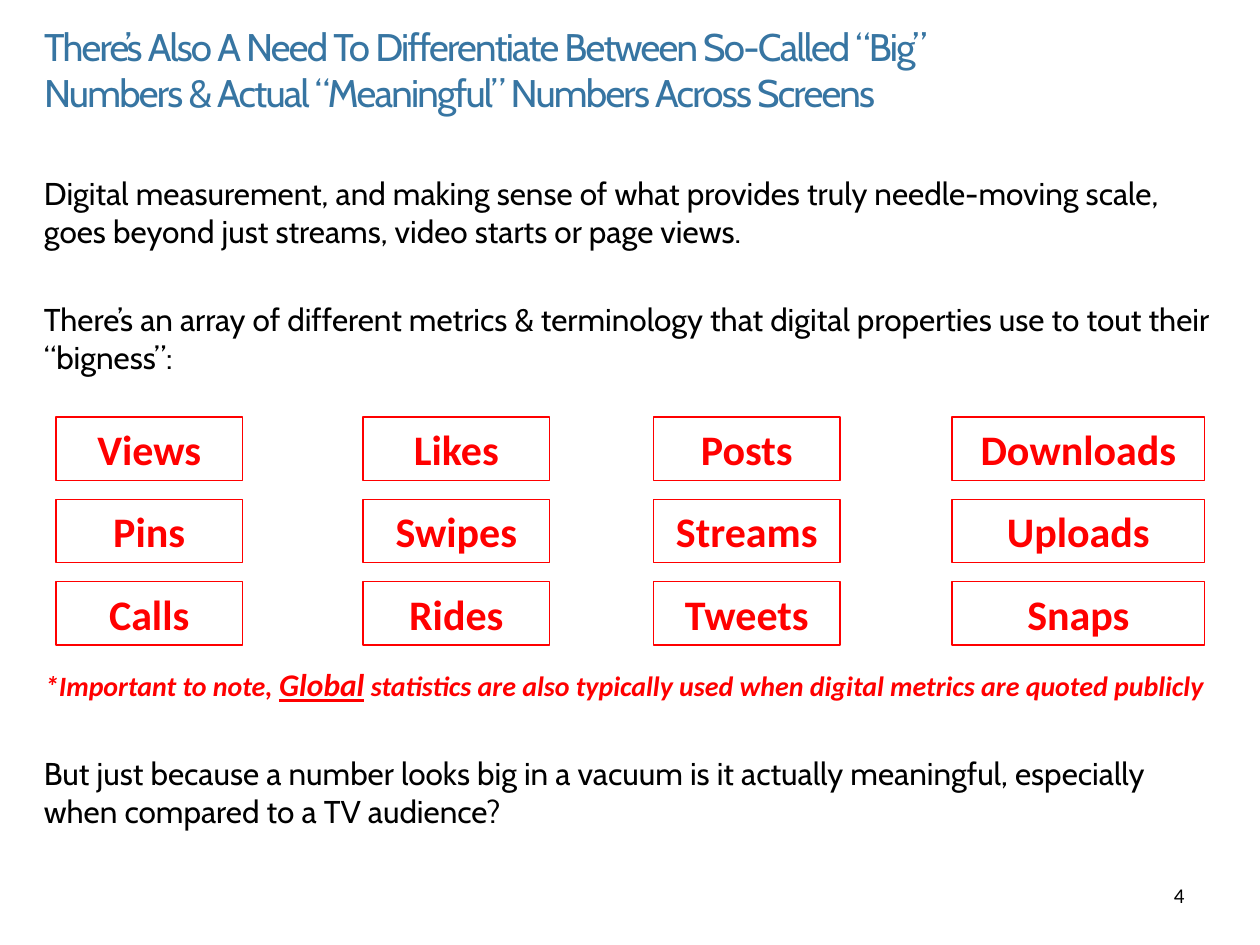
from dataclasses import dataclass

from pptx import Presentation
from pptx.dml.color import RGBColor
from pptx.enum.shapes import MSO_SHAPE
from pptx.enum.text import MSO_ANCHOR, MSO_AUTO_SIZE, PP_ALIGN
from pptx.slide import Slide
from pptx.text.text import TextFrame, _Run as Run
from pptx.util import Pt

BLACK = RGBColor(0x00, 0x00, 0x00)
RED = RGBColor(0xFF, 0x00, 0x00)
BLUE = RGBColor(0x37, 0x75, 0xA2)

TITLE_FORMAT = {"name": "Cabin", "size": Pt(22), "bold": False}
BODY_FORMAT = {"name": "Cabin", "size": Pt(18)}
METRIC_FORMAT = {"name": "Calibri", "size": Pt(24), "bold": True}
NOTE_FORMAT = {"name": "Calibri", "size": Pt(16), "bold": True, "italic": True}
NOTE_KEY_FORMAT = NOTE_FORMAT | {"size": Pt(18), "underline": True}
NUMBER_FORMAT = {"name": "Calibri", "size": Pt(12)}

TITLE = ("There’s Also A Need To Differentiate Between So-Called “Big” "
         "Numbers & Actual “Meaningful” Numbers Across Screens")

# Text and the space before it, in points
BODY = [
    ("Digital measurement, and making sense of what provides truly "
     "needle-moving scale, goes beyond just streams, video starts or page views.", 0),
    ("There’s an array of different metrics & terminology that digital "
     "properties use to tout their “bigness”:", 29),
    ("But just because a number looks big in a vacuum is it actually "
     "meaningful, especially when compared to a TV audience?", 216),
]

NOTE = [
    ("*Important to note, ", NOTE_FORMAT),
    ("Global", NOTE_KEY_FORMAT),
    (" statistics are also typically used when digital metrics are quoted publicly",
     NOTE_FORMAT),
]


@dataclass(frozen=True)
class MetricColumn:
    left: float
    width: float
    labels: tuple[str, ...]


COLUMNS = [
    MetricColumn(32, 106.5, ("Views", "Pins", "Calls")),
    MetricColumn(207.5, 106.5, ("Likes", "Swipes", "Rides")),
    MetricColumn(373.5, 106.5, ("Posts", "Streams", "Tweets")),
    MetricColumn(544, 144.5, ("Downloads", "Uploads", "Snaps")),
]
METRIC_TOP = 238.3
METRIC_PITCH = 47
METRIC_HEIGHT = 36.3


def format_run(run: Run, text: str, values: dict, color: RGBColor) -> None:
    run.text = text
    for name, value in values.items():
        setattr(run.font, name, value)
    run.font.color.rgb = color


def add_text_box(slide: Slide, left: float, top: float,
                 width: float, height: float) -> TextFrame:
    frame = slide.shapes.add_textbox(
        Pt(left), Pt(top), Pt(width), Pt(height)).text_frame
    frame.word_wrap = True
    return frame


def set_title(slide: Slide) -> None:
    title = slide.shapes.title
    title.left, title.top, title.width, title.height = Pt(18), Pt(9.4), Pt(599), Pt(60.5)
    frame = title.text_frame
    frame.auto_size = MSO_AUTO_SIZE.NONE
    frame.vertical_anchor = MSO_ANCHOR.TOP
    paragraph = frame.paragraphs[0]
    paragraph.alignment = PP_ALIGN.LEFT
    run = paragraph.add_run()
    format_run(run, TITLE, TITLE_FORMAT, BLUE)
    run.font._element.set("spc", "-100")  # letter spacing of -1 point


def add_body(slide: Slide) -> None:
    frame = add_text_box(slide, 18, 95.8, 684, 406.8)
    for index, (text, space_before) in enumerate(BODY):
        paragraph = frame.add_paragraph() if index else frame.paragraphs[0]
        paragraph.space_before = Pt(space_before)
        format_run(paragraph.add_run(), text, BODY_FORMAT, BLACK)


def add_metric(slide: Slide, column: MetricColumn, row: int) -> None:
    shape = slide.shapes.add_shape(
        MSO_SHAPE.RECTANGLE, Pt(column.left), Pt(METRIC_TOP + row * METRIC_PITCH),
        Pt(column.width), Pt(METRIC_HEIGHT))
    shape.shadow.inherit = False
    shape.fill.background()
    shape.line.color.rgb = RED
    shape.line.width = Pt(0.75)
    frame = shape.text_frame
    frame.word_wrap = True
    paragraph = frame.paragraphs[0]
    paragraph.alignment = PP_ALIGN.CENTER
    format_run(paragraph.add_run(), column.labels[row], METRIC_FORMAT, RED)


def add_note(slide: Slide) -> None:
    frame = add_text_box(slide, 5, 376.6, 710, 29)
    frame.margin_right = Pt(13)
    paragraph = frame.paragraphs[0]
    paragraph.alignment = PP_ALIGN.CENTER
    for text, values in NOTE:
        format_run(paragraph.add_run(), text, values, RED)


def add_page_number(slide: Slide) -> None:
    paragraph = add_text_box(slide, 516, 500.5, 168, 28.8).paragraphs[0]
    paragraph.alignment = PP_ALIGN.RIGHT
    format_run(paragraph.add_run(), "4", NUMBER_FORMAT, BLACK)


def main() -> None:
    presentation = Presentation()
    presentation.slide_width, presentation.slide_height = Pt(720), Pt(540)
    slide = presentation.slides.add_slide(
        presentation.slide_layouts.get_by_name("Title Only"))
    set_title(slide)
    add_body(slide)
    for column in COLUMNS:
        for row in range(len(column.labels)):
            add_metric(slide, column, row)
    add_note(slide)
    add_page_number(slide)
    presentation.save("out.pptx")


if __name__ == "__main__":
    main()
